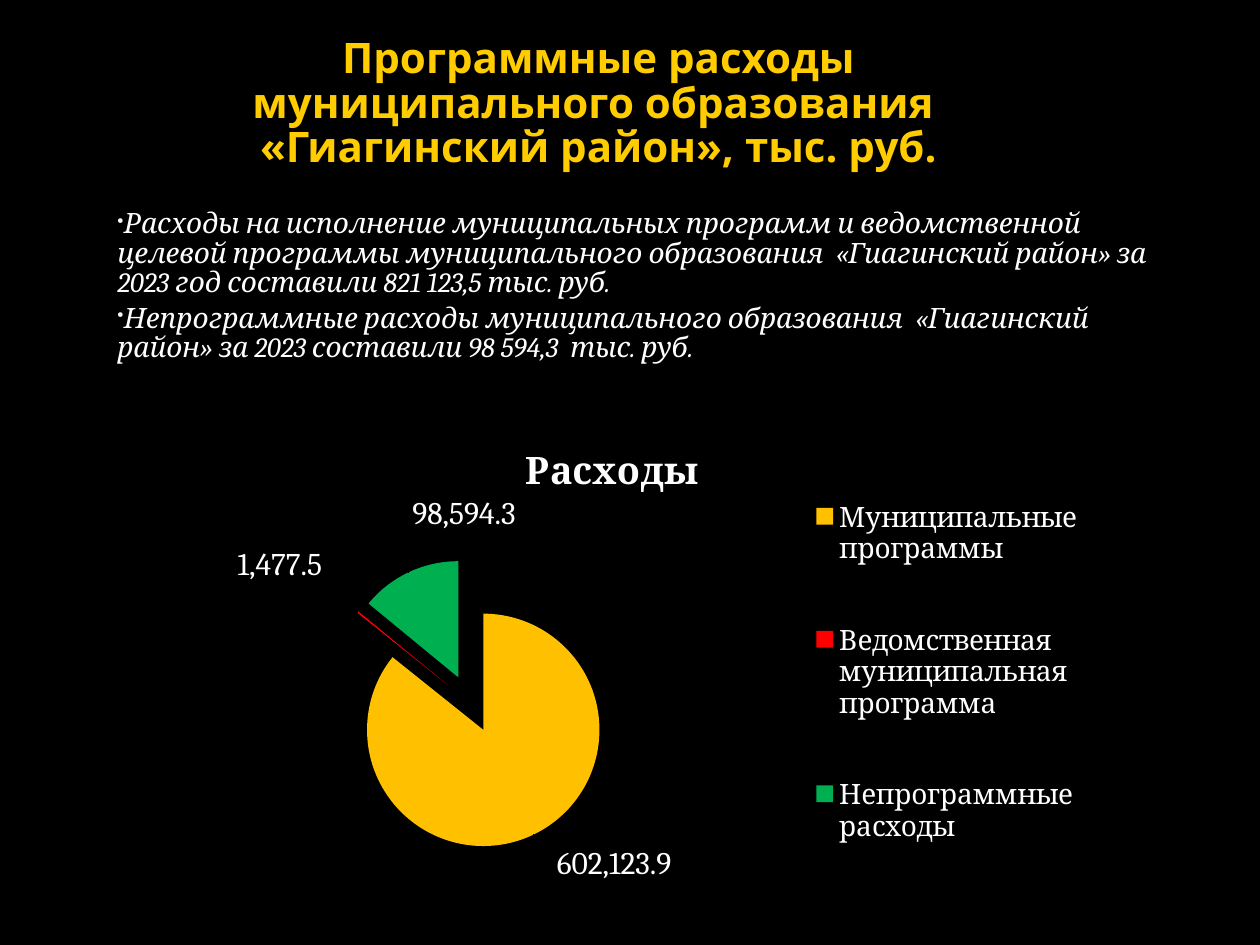
import pptx
import pptx.chart.data
import pptx.dml.color
import pptx.enum.chart
import pptx.enum.text
import pptx.oxml
import pptx.oxml.ns
import pptx.util
from dataclasses import dataclass

PX = 914400 / 126  # EMU per pixel


@dataclass(frozen=True)
class Theme:
    background: str = "000000"
    heading: str = "FFCC00"
    body: str = "FFFFFF"
    bullet: str = "F9F9F9"
    slices: tuple = ("FFC000", "FF0000", "00B050")
    heading_font: str = "Open Sans"
    body_font: str = "Cambria"
    heading_size: float = 24
    body_size: float = 16
    chart_size: float = 18
    chart_title_size: float = 21.6
    line_spacing: float = 0.88


def rgb(value):
    return pptx.dml.color.RGBColor.from_string(value)


def px(value):
    return pptx.util.Emu(round(value * PX))


def element(tag, **attributes):
    node = pptx.oxml.parse_xml(f"<{tag} {pptx.oxml.ns.nsdecls(tag.split(':')[0])}/>")
    for name, value in attributes.items():
        node.set(name, str(value))
    return node


def manual_layout(**values):
    """Layout whose values are fractions of the chart area."""
    layout = element("c:layout")
    manual = element("c:manualLayout")
    layout.append(manual)
    for name, value in values.items():
        manual.append(element(f"c:{name}", val=value))
    return layout


class SlideBuilder:
    def __init__(self, slide, theme):
        self.slide = slide
        self.theme = theme
        fill = slide.background.fill
        fill.solid()
        fill.fore_color.rgb = rgb(theme.background)

    def style(self, font, color, **formats):
        for name, value in formats.items():
            setattr(font, name, value)
        font.color.rgb = rgb(color)

    def text(self, box, paragraphs, color, anchor="TOP", align="LEFT", bullets=False, **formats):
        frame = self.slide.shapes.add_textbox(*map(px, box)).text_frame
        frame.word_wrap = True
        frame.vertical_anchor = getattr(pptx.enum.text.MSO_ANCHOR, anchor)
        for index, words in enumerate(paragraphs):
            paragraph = frame.add_paragraph() if index else frame.paragraphs[0]
            paragraph.text = words
            paragraph.alignment = getattr(pptx.enum.text.PP_ALIGN, align)
            paragraph.line_spacing = self.theme.line_spacing
            if index:
                paragraph.space_before = pptx.util.Pt(3.2)
            if bullets:
                self.bullet(paragraph)
            for run in paragraph.runs:
                self.style(run.font, color, **formats)

    def bullet(self, paragraph):
        properties = paragraph._p.get_or_add_pPr()
        color = element("a:buClr")
        color.append(element("a:srgbClr", val=self.theme.bullet))
        properties.extend([color, element("a:buSzPct", val=65000), element("a:buChar", char="•")])

    def pie(self, box, title, values, label_shifts):
        theme = self.theme
        data = pptx.chart.data.CategoryChartData(number_format="#,##0.0")
        data.categories = list(values)
        data.add_series(title, list(values.values()))
        kind = pptx.enum.chart.XL_CHART_TYPE.PIE
        chart = self.slide.shapes.add_chart(kind, *map(px, box), data).chart
        self.style(chart.font, theme.body, name=theme.body_font,
                   size=pptx.util.Pt(theme.chart_size))

        # Chart title
        chart.has_title = True
        chart.chart_title.include_in_layout = False
        heading = chart.chart_title.text_frame
        heading.text = title
        self.style(heading.paragraphs[0].runs[0].font, theme.body, name=theme.body_font,
                   size=pptx.util.Pt(theme.chart_title_size), bold=True)

        # Legend
        chart.has_legend = True
        legend = chart.legend
        legend.position = pptx.enum.chart.XL_LEGEND_POSITION.RIGHT
        legend.include_in_layout = False
        self.style(legend.font, theme.body, name=theme.body_font,
                   size=pptx.util.Pt(theme.body_size))
        legend._element.find(pptx.oxml.ns.qn("c:legendPos")).addnext(manual_layout(
            xMode="edge", yMode="edge", x=0.68, y=0.04, w=0.3, h=0.96))

        # Plot area
        plot = chart.plots[0]
        plot.vary_by_categories = True
        area = chart._chartSpace.chart.plotArea
        for old in area.findall(pptx.oxml.ns.qn("c:layout")):
            area.remove(old)
        area.insert(0, manual_layout(layoutTarget="inner", xMode="edge", yMode="edge",
                                     x=0.21, y=0.28, w=0.29, h=0.61))

        # Slices
        series = plot.series[0]
        for index, color in enumerate(theme.slices):
            fill = series.points[index].format.fill
            fill.solid()
            fill.fore_color.rgb = rgb(color)
        first_slice = series._element.find(pptx.oxml.ns.qn("c:dPt"))
        first_slice.addprevious(element("c:explosion", val=25))

        # Value labels
        labels = series.data_labels
        label_formats = {
            "show_value": True, "show_percentage": False, "show_category_name": False,
            "number_format": "#,##0.0", "number_format_is_linked": False,
            "position": pptx.enum.chart.XL_LABEL_POSITION.OUTSIDE_END,
        }
        for name, value in label_formats.items():
            setattr(labels, name, value)
        self.style(labels.font, theme.body, name=theme.body_font,
                   size=pptx.util.Pt(theme.chart_size))
        for index, (right, down) in enumerate(label_shifts):
            label = series.points[index].data_label
            label.position = label_formats["position"]
            label._dLbl.find(pptx.oxml.ns.qn("c:idx")).addnext(manual_layout(
                x=round(right / box[2], 2), y=round(down / box[3], 2)))


def main():
    theme = Theme()
    deck = pptx.Presentation()
    deck.slide_width, deck.slide_height = px(1260), px(945)
    builder = SlideBuilder(deck.slides.add_slide(deck.slide_layouts[6]), theme)

    # Heading
    builder.text(
        (84, 26, 1029, 158),
        ["Программные расходы\v муниципального образования  \v«Гиагинский район», тыс. руб."],
        theme.heading, anchor="MIDDLE", align="CENTER",
        name=theme.heading_font, size=pptx.util.Pt(theme.heading_size), bold=True)

    # Explanation
    builder.text(
        (105, 204, 1081, 208),
        ["Расходы на исполнение муниципальных программ и ведомственной целевой программы "
         "муниципального образования  «Гиагинский район» за 2023 год составили "
         "821 123,5 тыс. руб.",
         "Непрограммные расходы муниципального образования  «Гиагинский район» за 2023 "
         "составили 98 594,3  тыс. руб."],
        theme.body, bullets=True,
        name=theme.body_font, size=pptx.util.Pt(theme.body_size), italic=True)

    # Spending by kind
    builder.pie(
        (115, 423, 1002, 480), "Расходы ",
        {"Муниципальные программы": 602123.9,
         "Ведомственная муниципальная программа": 1477.5,
         "Непрограммные расходы": 98594.3},
        label_shifts=[(24, 7), (-35, -22), (115, -32)])

    deck.save("out.pptx")


if __name__ == "__main__":
    main()
